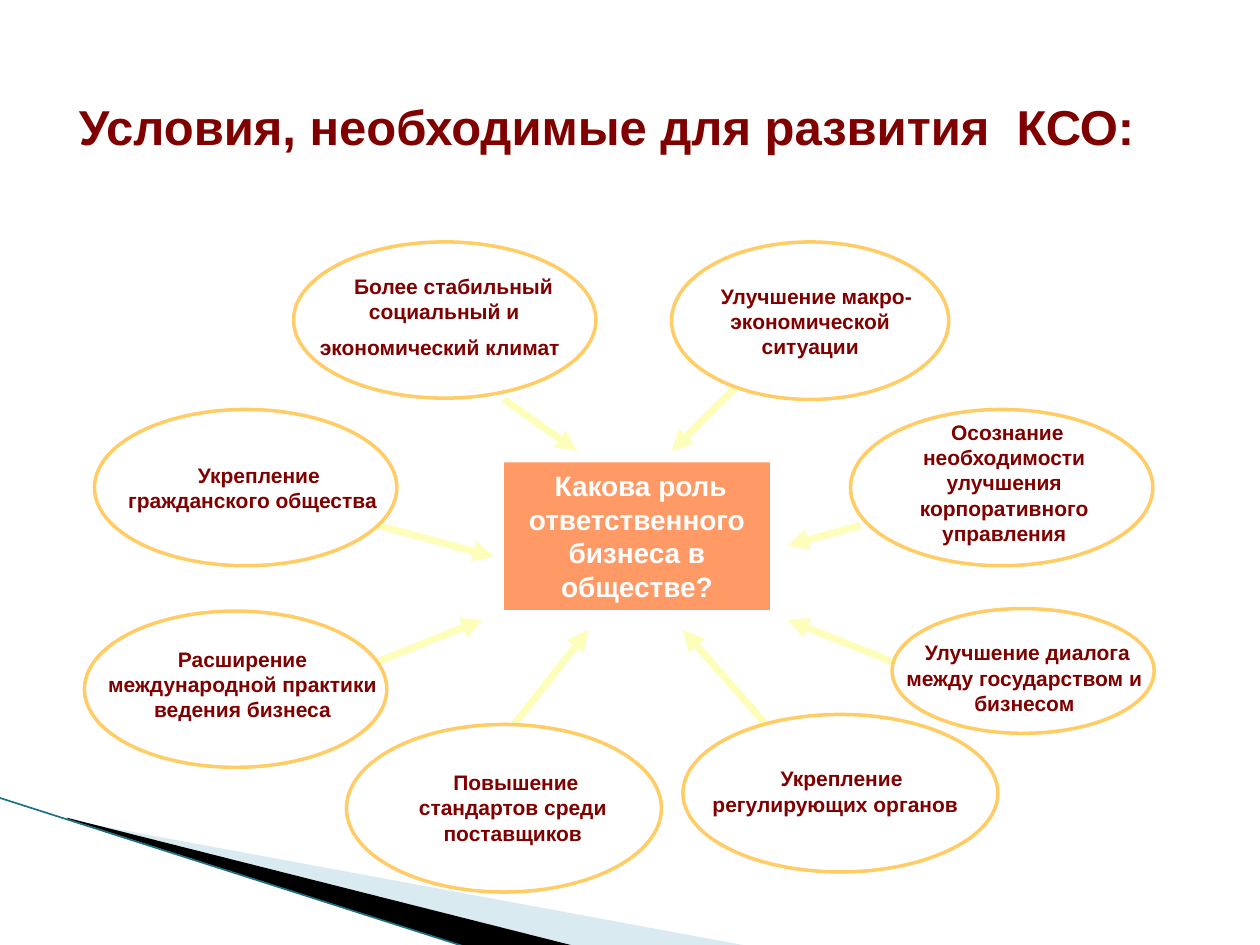
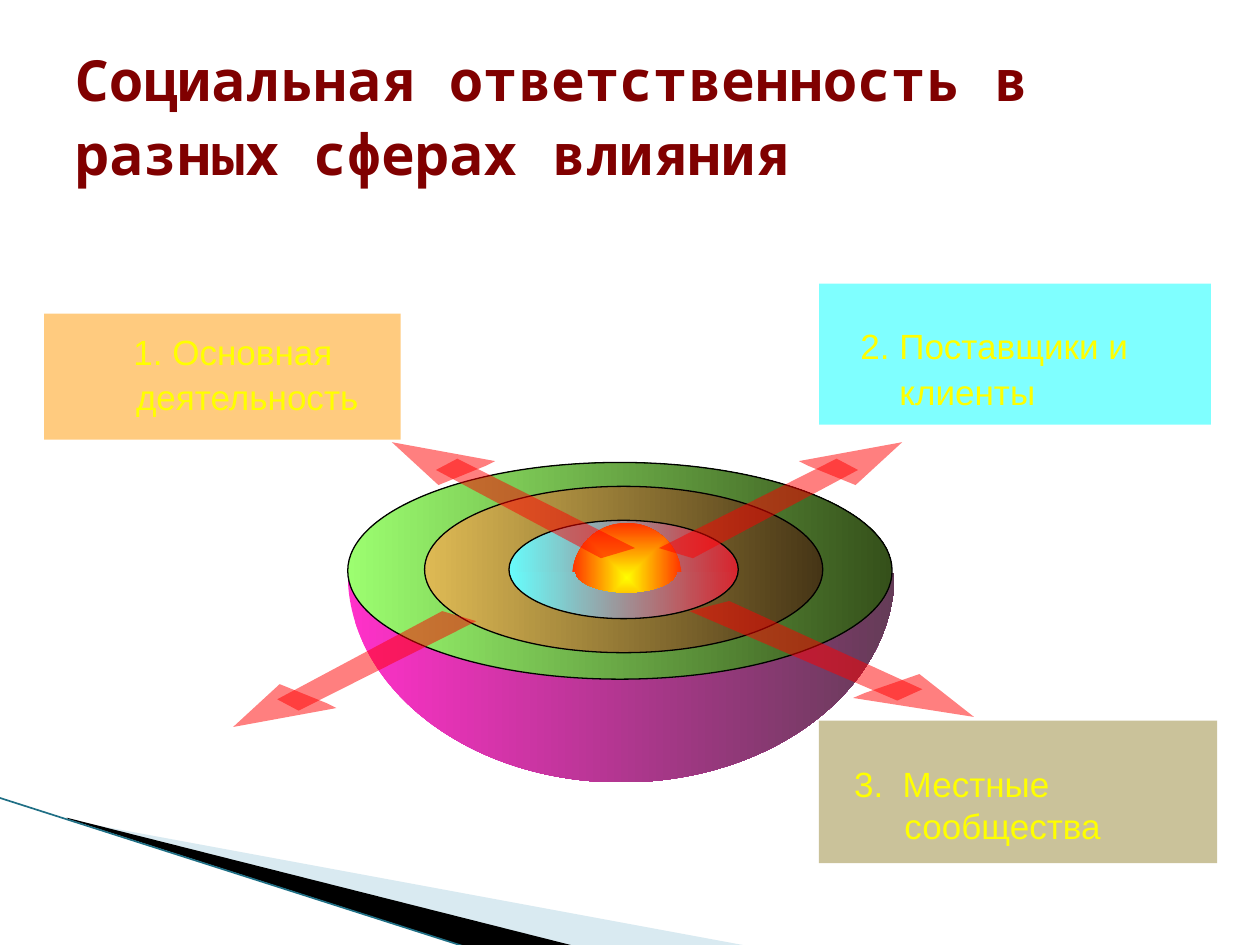
from lxml import etree
from pptx import Presentation
from pptx import util as u
from pptx.dml.color import RGBColor
from pptx.enum import shapes, text
from pptx.oxml.ns import qn

# Slide grid: 10 columns by 7.5 rows of square cells
WIDTH, HEIGHT = u.Inches(10), u.Inches(7.5)
CELL = WIDTH // 10
HUES = dict(
    title="800000", white="FFFFFF", black="000000", pale="A0CBDC", teal="1F6F85",
    straw="FCFEB9", rim="FFCC66", core="FF9966", orange="FF9900", aqua="00FFFF",
    khaki="968636", yellow="FFFF00", red="FF0000")
RECT, OVAL = shapes.MSO_SHAPE.RECTANGLE, shapes.MSO_SHAPE.OVAL
CENTER, LEFT = text.PP_ALIGN.CENTER, text.PP_ALIGN.LEFT
MIDDLE, TOP = text.MSO_ANCHOR.MIDDLE, text.MSO_ANCHOR.TOP
BEND = 0.5523  # handle length of a quarter ellipse


def grid(*cells):
    return [round(n * CELL) for n in cells]


def tone(code):
    return RGBColor.from_string(HUES.get(code, code))


def child(node, tag, **attrs):
    return etree.SubElement(node, qn(tag), {k: str(v) for k, v in attrs.items()})


# Fills, outlines and text
def paint(shape, fill=None, alpha=100, ramp=None, line=None, width=1):
    shape.shadow.inherit = False
    if ramp:
        shape.fill.gradient()
        shape.fill.gradient_angle = 0
        for stop, code in zip(shape.fill.gradient_stops, ramp):
            stop.color.rgb = tone(code)
    elif fill:
        shape.fill.solid()
        shape.fill.fore_color.rgb = tone(fill)
        if alpha < 100:
            color = shape._element.spPr.find(qn("a:solidFill"))[0]
            child(color, "a:alpha", val=alpha * 1000)
    else:
        shape.fill.background()
    if line:
        shape.line.color.rgb = tone(line)
        shape.line.width = u.Pt(width)
    else:
        shape.line.fill.background()
    return shape


def write(shape, words, size, hue, font="Arial", bold=False, align=LEFT,
          anchor=TOP, margin=0, indent=0, tail=None):
    frame = shape.text_frame
    frame.word_wrap = True
    frame.vertical_anchor = anchor
    frame.text = words
    para = frame.paragraphs[0]
    para.alignment = align
    props = para._p.get_or_add_pPr()
    props.set("marL", str(grid(margin)[0]))
    props.set("indent", str(grid(indent)[0]))
    if tail:  # a larger closing space sets the height of the last line
        para.add_run().text = " "
    for run, points in zip(para.runs, (size, tail)):
        run.font.name, run.font.size = font, u.Pt(points)
        run.font.bold, run.font.color.rgb = bold, tone(hue)


def label(slide, box, words, size, hue, **style):
    write(slide.shapes.add_textbox(*grid(*box)), words, size, hue, **style)


def block(slide, kind, box, **look):
    return paint(slide.shapes.add_shape(kind, *grid(*box)), **look)


def link(slide, start, end, hue, width, arrow=False):
    line = slide.shapes.add_connector(
        shapes.MSO_CONNECTOR.STRAIGHT, *grid(*start, *end))
    line.line.color.rgb = tone(hue)
    line.line.width = u.Pt(width)
    if arrow:
        child(line.line._get_or_add_ln(), "a:tailEnd", type="triangle")
    child(line._element.spPr, "a:effectLst")


# Free outlines
def curve(track):
    """Join each three line points into one Bezier segment."""
    lines = track.findall(qn("a:lnTo"))
    for first, *rest in zip(lines[::3], lines[1::3], lines[2::3]):
        first.tag = qn("a:cubicBezTo")
        for step in rest:
            first.append(step[0])
            track.remove(step)


def reframe(shape, track, box):
    """Give the shape another frame and leave its points in place."""
    left, top, wide, high = grid(*box)
    dx, dy = shape.left - left, shape.top - top
    for point in track.iter(qn("a:pt")):
        point.set("x", str(int(point.get("x")) + dx))
        point.set("y", str(int(point.get("y")) + dy))
    track.set("w", str(wide))
    track.set("h", str(high))
    shape.left, shape.top, shape.width, shape.height = left, top, wide, high


def outline(slide, *loops, bent=False, box=None, **look):
    first, *rest = [[grid(*point) for point in loop] for loop in loops]
    pen = slide.shapes.build_freeform(*first[0], scale=1.0)
    pen.add_line_segments(first[1:], close=not bent)
    for loop in rest:
        pen.move_to(*loop[0])
        pen.add_line_segments(loop[1:], close=not bent)
    shape = pen.convert_to_shape()
    track = next(shape._element.iter(qn("a:path")))
    if bent:
        curve(track)
    if box:
        reframe(shape, track, box)
    return paint(shape, **look)


def arc(x, y, rx, ry, turns=4):
    """Quarter turns from the left end, first through the bottom."""
    ends = [(-1, 0), (0, 1), (1, 0), (0, -1), (-1, 0)][:turns + 1]
    points = ends[:1]
    for (ax, ay), (bx, by) in zip(ends, ends[1:]):
        points += [(ax + BEND * bx, ay + BEND * by),
                   (bx + BEND * ax, by + BEND * ay), (bx, by)]
    return [(x + rx * px, y + ry * py) for px, py in points]


def ring(slide, x, y, outer, inner, **look):
    outline(slide, arc(x, y, *outer), arc(x, y, *inner)[::-1], bent=True, **look)


def ray(slide, tip, sx, sy):
    head = [(0, 0), (0.82, 0.15), (0.74, 0.19), (0.37, 0.34)]
    shaft = [(0.35, 0.22), (1.66, 0.92), (1.93, 0.84), (0.52, 0.13)]
    for part in (head, shaft):
        points = [(tip[0] + sx * x, tip[1] + sy * y) for x, y in part]
        outline(slide, points, fill="red", alpha=50)


# Shared corner wedge
def page(deck):
    slide = deck.slides.add_slide(deck.slide_layouts[6])
    outline(slide, [(0.55, 6.51), (5.95, 7.51), (4.56, 7.51), (0.55, 6.5)],
            box=(0.78, 5.47, 4.16, 1.58), fill="pale", alpha=40)
    outline(slide, [(0.53, 6.49), (4.57, 7.51), (3.72, 7.52), (0.54, 6.5)],
            box=(-0.06, 6.33, 4.16, 0.92), fill="black")
    link(slide, (-0.01, 6.33), (3.71, 7.52), "teal", 0.95)
    return slide


def heading(slide, box, words, size, **style):
    label(slide, box, words, size, "title", bold=True, anchor=MIDDLE, **style)


def needs(deck):
    slide = page(deck)
    # Arrows towards the question
    for start, end in [
            ((6.08, 5.75), (5.42, 5)), ((4.08, 5.75), (4.67, 5)),
            ((7.08, 5.25), (6.25, 4.92)), ((3, 5.25), (3.83, 4.92)),
            ((6.83, 4.17), (6.25, 4.33)), ((5.83, 3.08), (5.33, 3.58)),
            ((4, 3.17), (4.58, 3.58)), ((3, 4.17), (3.92, 4.42))]:
        link(slide, start, end, "straw", 4, arrow=True)
    heading(slide, (0.36, 0.54, 8.91, 0.92),
            "Условия, необходимые для развития  КСО:", 28, align=CENTER)
    # Conditions: oval, text box, first-line shift, closing size, words
    for oval, box, shift, tail, words in [
            ((2.75, 5.75, 2.5, 1.33), (3.19, 6.06, 1.76, 0.73), 0.05, None,
             "Повышение стандартов среди поставщиков"),
            ((0.67, 4.85, 2.4, 1.24), (0.67, 5.08, 2.51, 0.7), 0, None,
             "Расширение международной практики ведения бизнеса"),
            ((0.75, 3.25, 2.4, 1.24), (0.83, 3.62, 2.35, 0.53), 0.1, None,
             "Укрепление гражданского общества"),
            ((2.33, 1.92, 2.4, 1.24), (2.4, 2.12, 2.25, 0.83), 0.15, 18,
             "Более стабильный социальный и экономический климат"),
            ((5.33, 1.92, 2.2, 1.25), (5.39, 2.2, 2.08, 0.73), 0.1, None,
             "Улучшение макро-экономической ситуации"),
            ((6.75, 3.25, 2.4, 1.24), (6.92, 3.28, 2.1, 1.13), 0.05, None,
             "Осознание необходимости улучшения корпоративного управления"),
            ((7.08, 4.83, 2.08, 0.99), (7, 5.03, 2.26, 0.73), 0.05, None,
             "Улучшение диалога между государством и бизнесом"),
            ((5.42, 5.67, 2.5, 1.25), (5.5, 6.03, 2.26, 0.53), 0.1, None,
             "Укрепление регулирующих органов")]:
        block(slide, OVAL, oval, line="rim", width=2)
        label(slide, box, words, 12, "title", bold=True, align=CENTER,
              indent=shift, tail=tail)
    # Central question
    core = block(slide, RECT, (4, 3.67, 2.11, 1.17), fill="core")
    write(core, "Какова роль ответственного бизнеса в обществе?", 16, "white",
          bold=True, align=CENTER, indent=0.06)


def spheres(deck):
    slide = page(deck)
    heading(slide, (0.5, 0.3, 9, 1.25),
            "Социальная ответственность в разных сферах влияния", 32.4,
            font="Noto Sans Mono", tail=36)
    # Bowl, glowing core and its rings
    cool = ("66FFFF", "DA1F28")
    outline(slide, arc(4.93, 4.55, 2.17, 1.66, 2), bent=True,
            ramp=("FF31C9", "643C57"))
    ring(slide, 4.95, 4.52, (0.95, 0.39), (0.38, 0.16), ramp=cool)
    glow = block(slide, OVAL, (4.54, 4.15, 0.87, 0.87), ramp=("yellow", "FF3300"))
    fill = glow._element.spPr.find(qn("a:gradFill"))
    fill.remove(fill.find(qn("a:lin")))
    half = dict.fromkeys("ltrb", 50000)
    child(child(fill, "a:path", path="shape"), "a:fillToRect", **half)
    rim = arc(4.97, 4.54, 0.95, 0.39, 2)
    lip = arc(4.97, 4.54, 0.41, 0.17, 2)[::-1]
    outline(slide, rim + [rim[-1], lip[0]] + lip, bent=True,
            box=(4.02, 4.14, 1.9, 0.79), ramp=cool)
    ring(slide, 4.92, 4.53, (2.16, 0.86), (1.47, 0.59),
         ramp=("9CFE70", "35501A"), line="black", width=0.75)
    ring(slide, 4.95, 4.52, (1.58, 0.66), (0.91, 0.39),
         ramp=("DEBA54", "463516"), line="black", width=0.75)
    # Spheres: panel, hue, text box, words, alignment, hanging indent, closing size
    for panel, hue, box, words, align, margin, indent, tail in [
            ((0.35, 2.49, 2.83, 1), "orange", (0.39, 2.57, 2.83, 0.8),
             "1. Основная деятельность", CENTER, 0.4, -0.31, 22),
            ((6.5, 2.25, 3.11, 1.12), "aqua", (6.64, 2.53, 3.11, 0.8),
             "2. Поставщики и клиенты", LEFT, 0.4, -0.31, 22),
            ((6.5, 5.72, 3.16, 1.13), "khaki", (6.59, 6, 3.16, 0.77),
             "3.  Местные сообщества", LEFT, 0.49, -0.4, None)]:
        block(slide, RECT, panel, fill=hue, alpha=50)
        label(slide, box, words, 20, "yellow", align=align,
              margin=margin, indent=indent, tail=tail)
    # Rays: tip, then horizontal and vertical stretch
    for tip, sx, sy in [((1.85, 5.77), 1, -1), ((7.73, 5.69), -1.17, -1),
                        ((3.11, 3.51), 1, 1), ((7.16, 3.51), -1, 1)]:
        ray(slide, tip, sx, sy)


def main():
    deck = Presentation()
    deck.slide_width, deck.slide_height = WIDTH, HEIGHT
    needs(deck)
    spheres(deck)
    deck.save("out.pptx")


if __name__ == "__main__":
    main()
